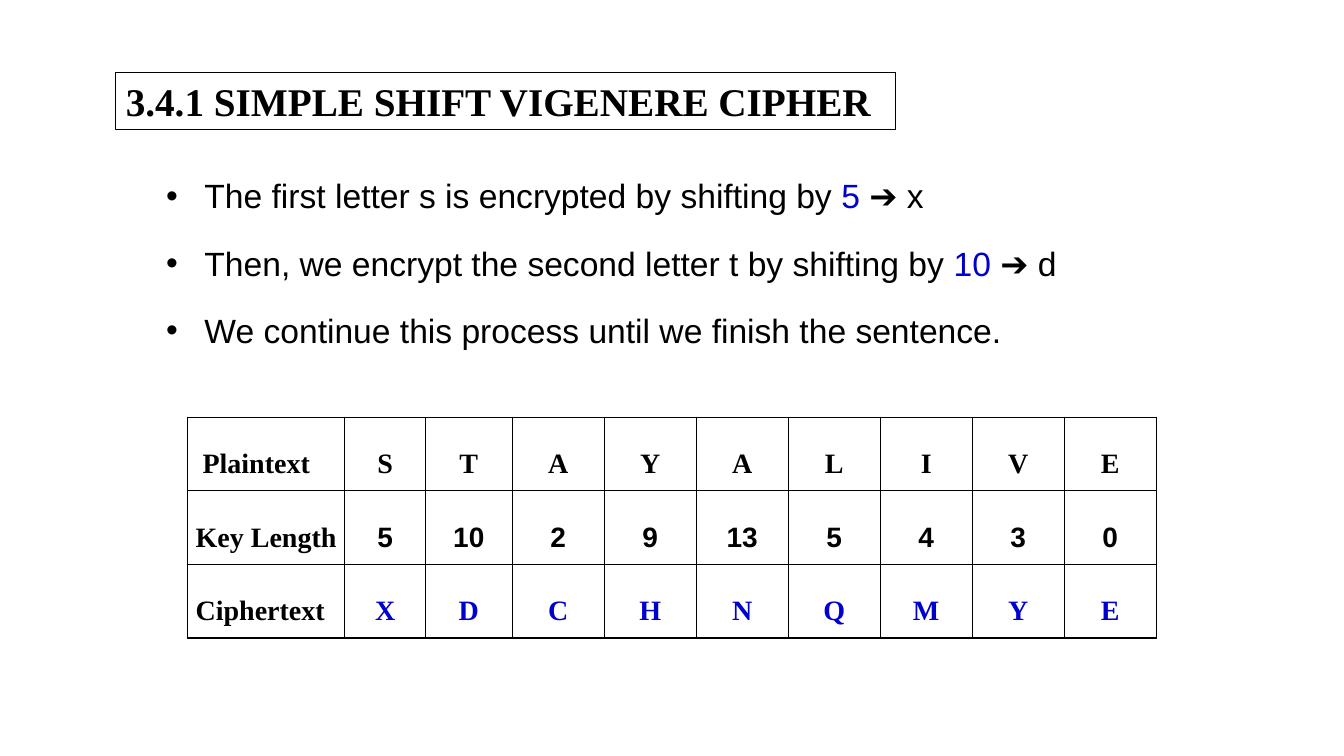
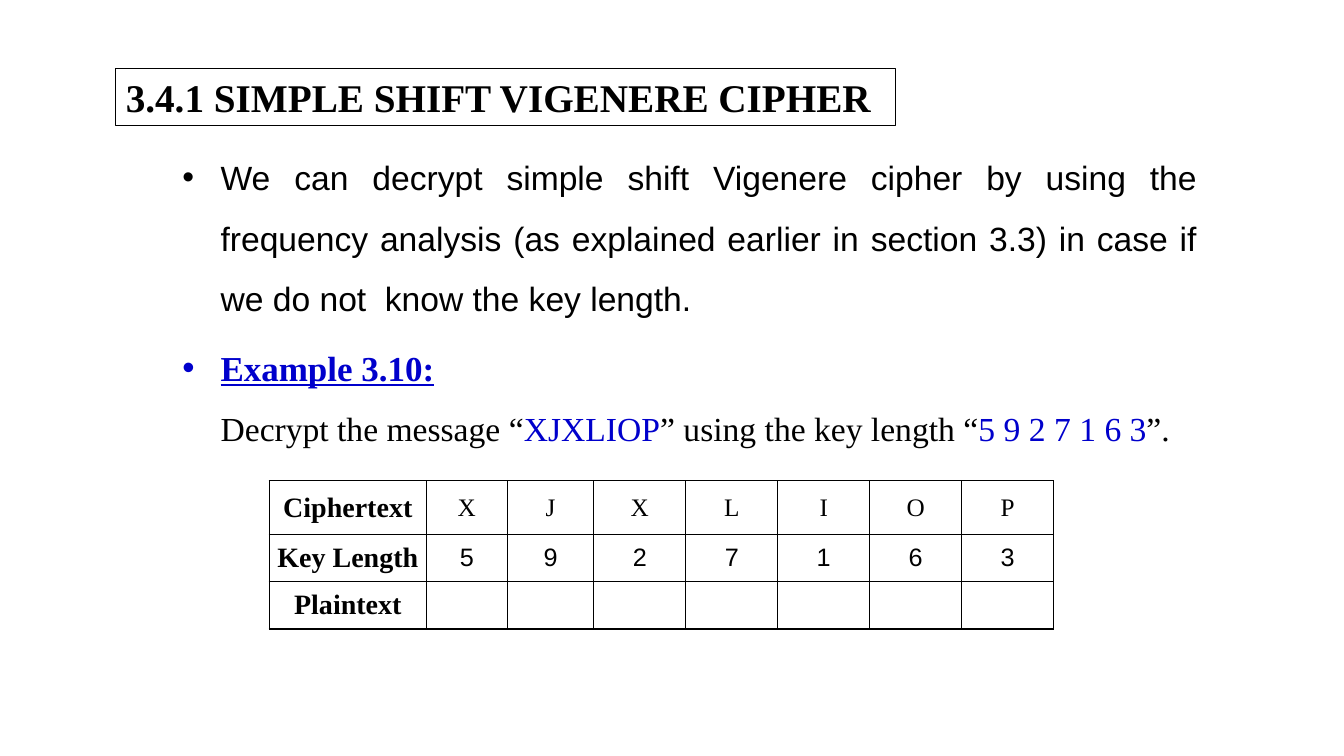
from dataclasses import dataclass
from typing import Any

from lxml import etree
from pptx import Presentation
from pptx.dml.color import RGBColor
from pptx.enum.shapes import MSO_SHAPE
from pptx.enum.text import MSO_ANCHOR, PP_ALIGN
from pptx.oxml.ns import qn
from pptx.util import Inches, Pt

RECTANGLE = MSO_SHAPE.RECTANGLE
LEFT, CENTER, JUSTIFY = PP_ALIGN.LEFT, PP_ALIGN.CENTER, PP_ALIGN.JUSTIFY
TOP, MIDDLE = MSO_ANCHOR.TOP, MSO_ANCHOR.MIDDLE

BLACK, BLUE = "000000", "0000CC"
SERIF, SANS = "Times New Roman", "Arial"
TITLE = "3.4.1 SIMPLE SHIFT VIGENERE CIPHER"
TITLE_FORMAT = {"size": Pt(28), "name": SERIF, "bold": True}
BODY_FORMAT = {"size": Pt(24), "name": SANS}
EXAMPLE_FORMAT = {"size": Pt(24), "name": SERIF}
HEADING_FORMAT = {"size": Pt(25), "name": SERIF, "bold": True, "underline": True}
LABEL_FORMAT = {"size": Pt(20), "name": SERIF, "bold": True}
BREAK = "\n"
FIRST_COLUMNS = [1.56, 0.8, 0.86]


@dataclass
class Span:
    text: str
    format: dict[str, Any]
    color: str = BLACK


@dataclass
class Bullet:
    spans: list[Span]
    align: Any = JUSTIFY


@dataclass
class Row:
    label: str
    values: list[str]
    font: str = SERIF
    color: str = BLACK


@dataclass
class Grid:
    box: tuple[float, float, float, float]
    heights: list[float]
    rows: list[Row]
    value_format: dict[str, Any]
    label_align: Any
    anchor: Any
    line_spacing: float
    margin: float


@dataclass
class Page:
    title_top: float
    body_box: tuple[float, float, float, float]
    bullets: list[Bullet]
    grid: Grid


def rgb(value: str) -> RGBColor:
    return RGBColor.from_string(value)


def set_values(target: Any, values: dict[str, Any]) -> None:
    for name, value in values.items():
        setattr(target, name, value)


def add_spans(para: Any, spans: list[Span]) -> None:
    for span in spans:
        if span.text == BREAK:
            para.add_line_break()
            continue
        run = para.add_run()
        run.text = span.text
        set_values(run.font, span.format)
        run.font.color.rgb = rgb(span.color)


def add_title(page: Any, top: float) -> None:
    box = page.shapes.add_shape(
        RECTANGLE, Inches(1.15), Inches(top), Inches(7.73), Inches(0.57)
    )
    box.shadow.inherit = False
    box.fill.background()
    box.line.color.rgb = rgb(BLACK)
    box.line.width = Pt(0.75)
    set_values(box.text_frame, {"word_wrap": True, "vertical_anchor": TOP})
    para = box.text_frame.paragraphs[0]
    para.alignment = LEFT
    add_spans(para, [Span(TITLE, TITLE_FORMAT)])


def add_bullets(
    page: Any, position: tuple[float, float, float, float], bullets: list[Bullet]
) -> None:
    frame = page.shapes.add_textbox(*map(Inches, position)).text_frame
    frame.word_wrap = True
    for index, bullet in enumerate(bullets):
        para = frame.add_paragraph() if index else frame.paragraphs[0]
        set_values(
            para,
            {"alignment": bullet.align, "line_spacing": 1.5, "space_before": Pt(4.8)},
        )
        properties = para._p.get_or_add_pPr()
        properties.set("marL", str(Inches(0.38)))
        properties.set("indent", str(-Inches(0.38)))
        etree.SubElement(properties, qn("a:buFont"), typeface=SANS)
        etree.SubElement(properties, qn("a:buChar"), char="•")
        add_spans(para, bullet.spans)


def add_borders(cell: Any) -> None:
    properties = cell._tc.get_or_add_tcPr()
    for side in ("lnL", "lnR", "lnT", "lnB"):
        line = etree.SubElement(properties, qn(f"a:{side}"), w=str(Pt(1)))
        fill = etree.SubElement(line, qn("a:solidFill"))
        etree.SubElement(fill, qn("a:srgbClr"), val=BLACK)


def add_cell(cell: Any, grid: Grid, span: Span, align: Any) -> None:
    add_borders(cell)
    cell.fill.background()
    set_values(
        cell,
        {
            "margin_left": Inches(grid.margin),
            "margin_right": Inches(grid.margin),
            "margin_top": 0,
            "margin_bottom": 0,
            "vertical_anchor": grid.anchor,
        },
    )
    para = cell.text_frame.paragraphs[0]
    set_values(para, {"alignment": align, "line_spacing": grid.line_spacing})
    if span.text:
        add_spans(para, [span])


def add_grid(page: Any, grid: Grid) -> None:
    count = len(grid.rows[0].values) + 1
    table = page.shapes.add_table(
        len(grid.rows), count, *map(Inches, grid.box)
    ).table
    set_values(table, {"first_row": False, "horz_banding": False})
    others = count - len(FIRST_COLUMNS)
    width = (grid.box[2] - sum(FIRST_COLUMNS)) / others
    for column, size in zip(table.columns, FIRST_COLUMNS + [width] * others):
        column.width = Inches(size)
    for index, row in enumerate(grid.rows):
        table.rows[index].height = Inches(grid.heights[index])
        label = Span(row.label, LABEL_FORMAT)
        add_cell(table.cell(index, 0), grid, label, grid.label_align)
        for column, value in enumerate(row.values, 1):
            span = Span(value, grid.value_format | {"name": row.font}, row.color)
            add_cell(table.cell(index, column), grid, span, CENTER)


def body(*parts: tuple[str, str]) -> Bullet:
    return Bullet([Span(text, BODY_FORMAT, color) for text, color in parts])


PAGES = [
    Page(
        0.72,
        (1.55, 1.49, 10.63, 2.5),
        [
            body(
                ("The first letter s is encrypted by shifting by ", BLACK),
                ("5 ", BLUE),
                ("➔ x", BLACK),
            ),
            body(
                ("Then, we encrypt the second letter t by shifting by ", BLACK),
                ("10 ", BLUE),
                ("➔ d", BLACK),
            ),
            body(("We continue this process until we finish the sentence.", BLACK)),
        ],
        Grid(
            (1.86, 4.14, 9.61, 2.19),
            [0.73] * 3,
            [
                Row(" Plaintext", list("STAYALIVE")),
                Row("Key Length", "5 10 2 9 13 5 4 3 0".split(), SANS),
                Row("Ciphertext", list("XDCHNQMYE"), color=BLUE),
            ],
            {"size": Pt(20), "bold": True},
            LEFT,
            TOP,
            2.0,
            0.08,
        ),
    ),
    Page(
        0.68,
        (1.71, 1.31, 10.26, 4.49),
        [
            body(
                (
                    "We can decrypt simple shift Vigenere cipher by using the "
                    "frequency analysis (as explained earlier in section 3.3) "
                    "in case if we do not  know the key length.",
                    BLACK,
                )
            ),
            Bullet(
                [
                    Span("Example 3.10:", HEADING_FORMAT, BLUE),
                    Span(BREAK, HEADING_FORMAT),
                    Span("Decrypt the message “", EXAMPLE_FORMAT),
                    Span("XJXLIOP", EXAMPLE_FORMAT, BLUE),
                    Span("” using the key length “", EXAMPLE_FORMAT),
                    Span("5 9 2 7 1 6 3", EXAMPLE_FORMAT, BLUE),
                    Span("”.", EXAMPLE_FORMAT),
                ],
                LEFT,
            ),
        ],
        Grid(
            (2.67, 4.77, 7.78, 1.48),
            [0.53, 0.47, 0.47],
            [
                Row("Ciphertext", list("XJXLIOP")),
                Row("Key Length", list("5927163"), SANS),
                Row("Plaintext", [""] * 7),
            ],
            {"size": Pt(18), "bold": False},
            CENTER,
            MIDDLE,
            1.0,
            0.07,
        ),
    ),
]


def main() -> None:
    deck = Presentation()
    set_values(deck, {"slide_width": Inches(13.33), "slide_height": Inches(7.5)})
    for content in PAGES:
        page = deck.slides.add_slide(deck.slide_layouts[6])
        add_bullets(page, content.body_box, content.bullets)
        add_title(page, content.title_top)
        add_grid(page, content.grid)
    deck.save("out.pptx")


if __name__ == "__main__":
    main()
